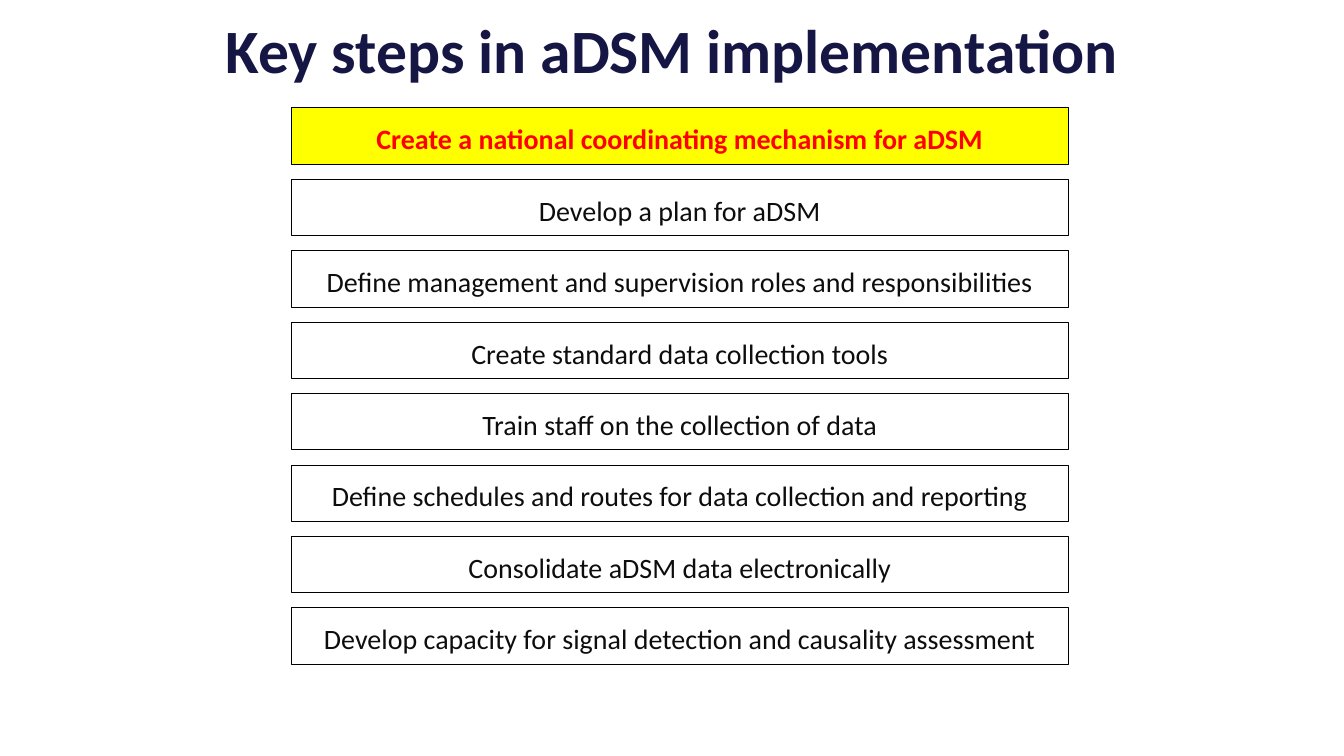
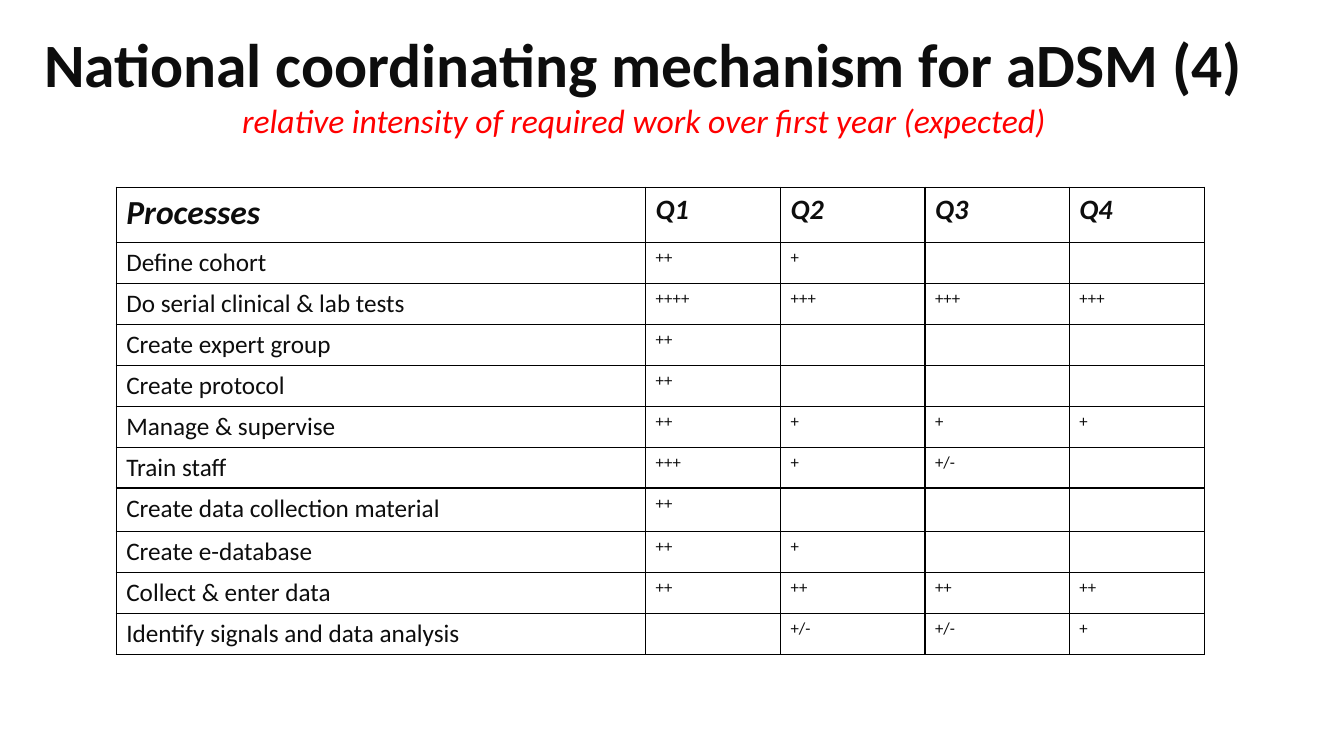
from lxml.etree import SubElement
from pptx import Presentation
from pptx.dml.color import RGBColor
from pptx.enum.shapes import MSO_SHAPE
from pptx.enum.text import MSO_ANCHOR, PP_ALIGN
from pptx.oxml.ns import qn
from pptx.util import Cm, Pt

COLORS = {
    "navy": "161645",
    "ink": "0D0D0D",
    "black": "000000",
    "white": "FFFFFF",
    "red": "FF0000",
    "yellow": "FFFF00",
}

STEPS = [
    "Create a national coordinating mechanism for aDSM",
    "Develop a plan for aDSM",
    "Define management and supervision roles and responsibilities",
    "Create standard data collection tools",
    "Train staff on the collection of data",
    "Define schedules and routes for data collection and reporting",
    "Consolidate aDSM data electronically",
    "Develop capacity for signal detection and causality assessment",
]
CURRENT_STEP = 0

QUARTERS = ["Processes", "Q1", "Q2", "Q3", "Q4"]
WORKLOAD = [
    ["Define cohort", "++", "+", "", ""],
    ["Do serial clinical & lab tests", "++++", "+++", "+++", "+++"],
    ["Create expert group", "++", "", "", ""],
    ["Create protocol", "++", "", "", ""],
    ["Manage & supervise", "++", "+", "+", "+"],
    ["Train staff", "+++", "+", "+/-", ""],
    ["Create data collection material", "++", "", "", ""],
    ["Create e-database", "++", "+", "", ""],
    ["Collect & enter data", "++", "++", "++", "++"],
    ["Identify signals and data analysis", "", "+/-", "+/-", "+"],
]


def color(name):
    return RGBColor.from_string(COLORS[name])


class Deck:
    """Holds the shared style and the slide being built."""

    font_name = "Calibri"
    title_size = 44

    def __init__(self):
        self.presentation = Presentation()
        self.presentation.slide_width = Cm(33.87)
        self.presentation.slide_height = Cm(19.05)
        self.slide = None

    def new_slide(self):
        self.slide = self.presentation.slides.add_slide(self.presentation.slide_layouts[6])

    def add_run(self, paragraph, text, size, color_name="ink", bold=False, italic=False):
        run = paragraph.add_run()
        run.text = text
        font = run.font
        font.name = self.font_name
        font.size = Pt(size)
        font.bold = bold
        font.italic = italic
        font.color.rgb = color(color_name)

    def title(self, text, left, top, width, height, color_name, subtitle=None):
        box = self.slide.shapes.add_textbox(Cm(left), Cm(top), Cm(width), Cm(height))
        frame = box.text_frame
        frame.word_wrap = True
        frame.vertical_anchor = MSO_ANCHOR.TOP if subtitle else MSO_ANCHOR.MIDDLE
        paragraph = frame.paragraphs[0]
        paragraph.alignment = PP_ALIGN.CENTER
        self.add_run(paragraph, text, self.title_size, color_name, bold=True)
        if subtitle:
            paragraph = frame.add_paragraph()
            paragraph.alignment = PP_ALIGN.CENTER
            self.add_run(paragraph, subtitle, 24, "red", italic=True)

    def step(self, text, left, top, width, height, highlighted):
        shape = self.slide.shapes.add_shape(
            MSO_SHAPE.RECTANGLE, Cm(left), Cm(top), Cm(width), Cm(height))
        shape.shadow.inherit = False
        shape.fill.solid()
        shape.fill.fore_color.rgb = color("yellow" if highlighted else "white")
        shape.line.color.rgb = color("black")
        shape.line.width = Pt(0.75)
        frame = shape.text_frame
        frame.word_wrap = True
        frame.vertical_anchor = MSO_ANCHOR.MIDDLE
        paragraph = frame.paragraphs[0]
        paragraph.alignment = PP_ALIGN.CENTER
        paragraph.line_spacing = 1.15
        self.add_run(paragraph, text, 20, "red" if highlighted else "ink", bold=highlighted)

    def cell(self, cell, text, size, header):
        self.cell_borders(cell)
        cell.fill.solid()
        cell.fill.fore_color.rgb = color("white")
        if text:
            self.add_run(cell.text_frame.paragraphs[0], text, size, bold=header, italic=header)

    def cell_borders(self, cell):
        properties = cell._tc.get_or_add_tcPr()
        for side in ("a:lnL", "a:lnR", "a:lnT", "a:lnB"):
            line = SubElement(properties, qn(side), w=str(Pt(1)))
            fill = SubElement(line, qn("a:solidFill"))
            SubElement(fill, qn("a:srgbClr"), val=COLORS["black"])

    def table(self, rows, left, top, column_widths, row_heights):
        """Draws a grid whose first row is the header and first column the labels."""
        table = self.slide.shapes.add_table(
            len(rows), len(column_widths), Cm(left), Cm(top),
            Cm(sum(column_widths)), Cm(sum(row_heights))).table
        table.first_row = False
        table.horz_banding = False
        for column, width in zip(table.columns, column_widths):
            column.width = Cm(width)
        for row, height in zip(table.rows, row_heights):
            row.height = Cm(height)
        for row_index, values in enumerate(rows):
            header = row_index == 0
            label_size, value_size = (24, 20) if header else (18, 12)
            for column_index, text in enumerate(values):
                size = value_size if column_index else label_size
                self.cell(table.cell(row_index, column_index), text, size, header)


def build_steps_slide(deck):
    deck.new_slide()
    deck.title("Key steps in aDSM implementation", 5.33, 0.13, 23.22, 2.2, "navy")
    first_top, pitch = 2.72, 1.8
    for index, text in enumerate(STEPS):
        deck.step(text, 7.34, first_top + index * pitch, 19.58, 1.42, index == CURRENT_STEP)


def build_workload_slide(deck):
    deck.new_slide()
    row_heights = [1.4] + [1.03] * len(WORKLOAD)
    row_heights[7] = 1.1
    deck.table([QUARTERS] + WORKLOAD, 2.93, 4.72, [13.34, 3.4, 3.64, 3.64, 3.4], row_heights)
    deck.title("National coordinating mechanism for aDSM (4)", 0.13, 0.53, 32.2, 3.2, "ink",
               subtitle="relative intensity of required work over first year (expected)")


def main():
    deck = Deck()
    build_steps_slide(deck)
    build_workload_slide(deck)
    deck.presentation.save("out.pptx")


if __name__ == "__main__":
    main()
